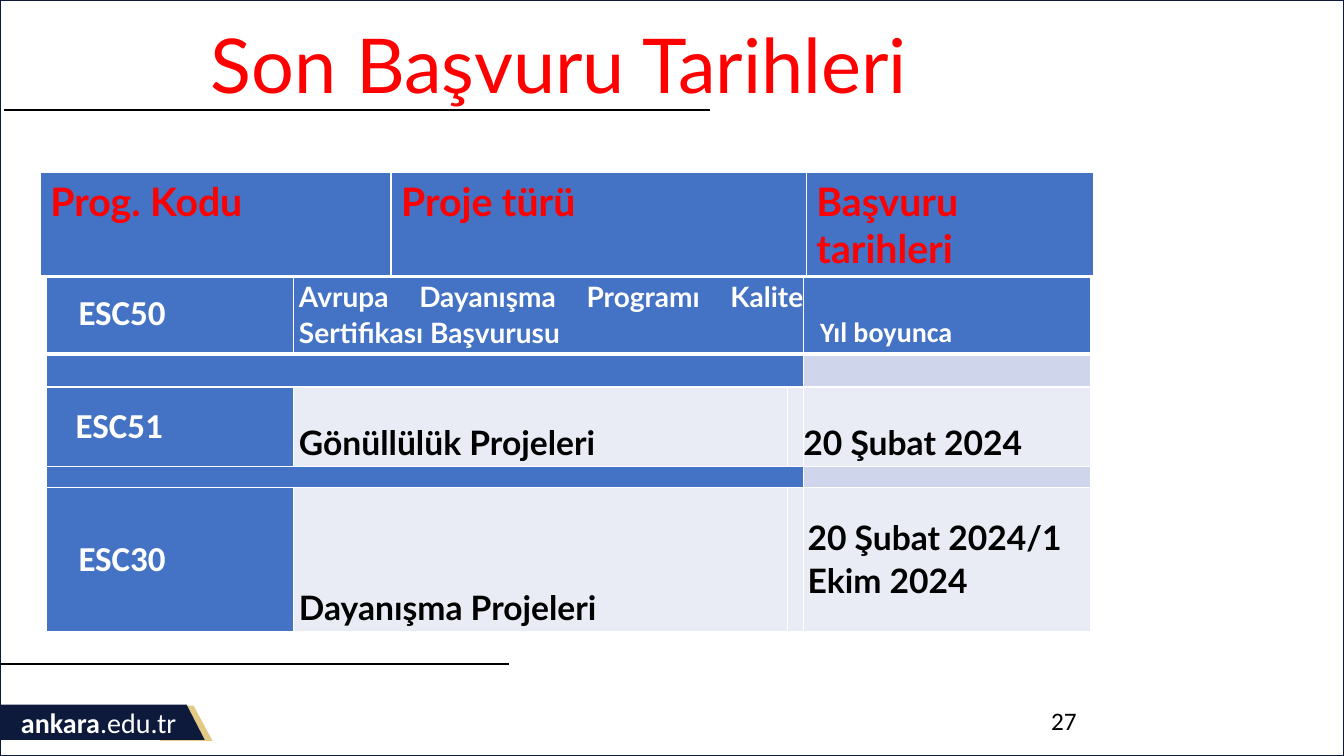
from dataclasses import dataclass

from lxml import etree
from pptx import Presentation
from pptx import util as u
from pptx.dml.color import RGBColor
from pptx.enum import shapes, text
from pptx.oxml import ns

SLIDE_WIDTH, SLIDE_HEIGHT = u.Inches(13.33), u.Inches(7.5)
MIDDLE, BOTTOM, TOP = (text.MSO_ANCHOR.MIDDLE, text.MSO_ANCHOR.BOTTOM,
                       text.MSO_ANCHOR.TOP)


@dataclass(frozen=True)
class Theme:
    navy: str = "0D1A3C"
    gold: str = "E3CA84"
    blue: str = "4472C4"
    band: str = "CFD5EA"
    pale: str = "E9EBF5"
    red: str = "FF0000"
    black: str = "000000"
    white: str = "FFFFFF"
    heading_font: str = "Lato"
    body_font: str = "Calibri"
    title_size: float = 54
    header_size: float = 28
    code_size: float = 25
    project_size: float = 24
    small_size: float = 20
    number_size: float = 18
    spacer_size: float = 8
    frame_line: float = 1.5
    rule_line: float = 1.31
    thin_border: float = 1
    thick_border: float = 3


THEME = Theme()


@dataclass(frozen=True)
class Style:
    size: float
    font: str
    color: str
    bold: bool = False


@dataclass(frozen=True)
class Box:
    """Left, top, width and height in percent of the slide."""
    left: float
    top: float
    width: float
    height: float

    def lengths(self) -> tuple:
        return (across(self.left), down(self.top),
                across(self.width), down(self.height))


@dataclass(frozen=True)
class Entry:
    """A table cell; its indent and space after are in points."""
    fill: str
    words: str = ""
    style: Style | None = None
    anchor: text.MSO_ANCHOR = BOTTOM
    indent: float = 0
    after: float = 8
    justified: bool = False
    columns: int = 1


@dataclass(frozen=True)
class Rule:
    start: float
    end: float
    height: float


CODE = Style(THEME.code_size, THEME.body_font, THEME.white, True)
PROJECT = Style(THEME.project_size, THEME.heading_font, THEME.black, True)
HEADER = Style(THEME.header_size, THEME.heading_font, THEME.red, True)
QUALITY = Style(THEME.small_size, THEME.heading_font, THEME.white, True)
ALL_YEAR = Style(THEME.small_size, THEME.body_font, THEME.white, True)
TITLE = Style(THEME.title_size, THEME.heading_font, THEME.red)
NUMBER = Style(THEME.number_size, THEME.body_font, THEME.black)
SITE_NAME = Style(THEME.small_size, THEME.body_font, THEME.white, True)
SITE_ENDING = Style(THEME.small_size, THEME.body_font, THEME.white)

RULES = [Rule(0.3, 52.8, 14.53), Rule(0.08, 37.88, 87.87)]
BADGE = [(0, 93.2), (13.88, 93.2), (15.23, 97.87), (0, 97.87)]

HEADER_ROWS = [[Entry(THEME.blue, words, HEADER, TOP)
                for words in ("Prog. Kodu", "Proje türü", "Başvuru tarihleri")]]
SPACER = [Entry(THEME.blue, columns=3), Entry(THEME.band)]
DATE_ROWS = [
    [Entry(THEME.blue, "ESC50", CODE, MIDDLE, 23),
     Entry(THEME.blue, "Avrupa Dayanışma Programı Kalite Sertifikası Başvurusu",
           QUALITY, indent=4, justified=True, columns=2),
     Entry(THEME.blue, "Yıl boyunca", ALL_YEAR, indent=12)],
    SPACER,
    [Entry(THEME.blue, "ESC51", CODE, MIDDLE, 21),
     Entry(THEME.pale, "Gönüllülük Projeleri", PROJECT, indent=4),
     Entry(THEME.pale),
     Entry(THEME.pale, "20 Şubat 2024", PROJECT)],
    SPACER,
    [Entry(THEME.blue, "ESC30", CODE, MIDDLE, 23),
     Entry(THEME.pale, "Dayanışma Projeleri", PROJECT, indent=4),
     Entry(THEME.pale),
     Entry(THEME.pale, "20 Şubat 2024/1 Ekim 2024", PROJECT, MIDDLE, 3, 4.3)],
]


def across(percent: float) -> int:
    return round(SLIDE_WIDTH * percent / 100)


def down(percent: float) -> int:
    return round(SLIDE_HEIGHT * percent / 100)


def style_run(run, style: Style) -> None:
    run.font.size = u.Pt(style.size)
    run.font.name = style.font
    run.font.bold = style.bold
    run.font.color.rgb = RGBColor.from_string(style.color)


def paint(shape, color: str) -> None:
    shape.shadow.inherit = False
    shape.fill.solid()
    shape.fill.fore_color.rgb = RGBColor.from_string(color)
    shape.line.fill.background()


def add_frame(slide) -> None:
    frame = slide.shapes.add_shape(shapes.MSO_SHAPE.RECTANGLE,
                                   *Box(0, 0, 100, 100).lengths())
    frame.shadow.inherit = False
    frame.fill.background()
    frame.line.color.rgb = RGBColor.from_string(THEME.navy)
    frame.line.width = u.Pt(THEME.frame_line)


def add_badge(slide) -> None:
    edge = slide.shapes.add_shape(shapes.MSO_SHAPE.TRAPEZOID,
                                  *Box(11.92, 93.33, 3.9, 4.67).lengths())
    edge.adjustments[0] = 0.54
    paint(edge, THEME.gold)
    start, *corners = [(across(x), down(y)) for x, y in BADGE]
    builder = slide.shapes.build_freeform(*start)
    builder.add_line_segments(corners)
    paint(builder.convert_to_shape(), THEME.navy)


def add_text(slide, box: Box, pieces: list[tuple[str, Style]]):
    frame = slide.shapes.add_textbox(*box.lengths()).text_frame
    frame.word_wrap = True
    for words, style in pieces:
        run = frame.paragraphs[0].add_run()
        run.text = words
        style_run(run, style)
    return frame


def add_rule(slide, rule: Rule) -> None:
    line = slide.shapes.add_connector(
        shapes.MSO_CONNECTOR.STRAIGHT, across(rule.start), down(rule.height),
        across(rule.end), down(rule.height))
    line.line.color.rgb = RGBColor.from_string(THEME.black)
    line.line.width = u.Pt(THEME.rule_line)
    etree.SubElement(line._element.spPr, ns.qn("a:effectLst"))


def add_borders(cell, bottom: float) -> None:
    properties = cell._tc.get_or_add_tcPr()
    for side in "LRTB":
        width = bottom if side == "B" else THEME.thin_border
        border = etree.SubElement(properties, ns.qn(f"a:ln{side}"),
                                  w=str(u.Pt(width)))
        fill = etree.SubElement(border, ns.qn("a:solidFill"))
        etree.SubElement(fill, ns.qn("a:srgbClr"), val=THEME.white)


def write_entry(cell, entry: Entry) -> None:
    paragraph = cell.text_frame.paragraphs[0]
    if entry.style is None:
        ending = paragraph._p.get_or_add_endParaRPr()
        ending.set("sz", str(THEME.spacer_size * 100))
    else:
        paragraph.text = entry.words
        style_run(paragraph.runs[0], entry.style)
    cell.vertical_anchor = entry.anchor
    if entry.anchor == TOP:
        return
    cell.margin_left = u.Pt(entry.indent)
    cell.margin_top = cell.margin_right = 0
    cell.margin_bottom = u.Inches(0.04)
    if entry.style:
        paragraph.line_spacing = 1.07
        paragraph.space_after = u.Pt(entry.after)
    if entry.justified:
        paragraph.alignment = text.PP_ALIGN.JUSTIFY


def add_grid(slide, left: float, top: float, widths: list[float],
             heights: list[float], rows: list[list[Entry]]) -> None:
    """Draw a table whose first row has a thick lower border."""
    box = Box(left, top, sum(widths), sum(heights))
    table = slide.shapes.add_table(len(heights), len(widths), *box.lengths()).table
    table.first_row = table.horz_banding = False
    for column, width in zip(table.columns, widths):
        column.width = across(width)
    for index, (row, height) in enumerate(zip(rows, heights)):
        table.rows[index].height = down(height)
        bottom = THEME.thin_border if index else THEME.thick_border
        position = 0
        for entry in row:
            last = position + entry.columns - 1
            for place in range(position, last + 1):
                cell = table.cell(index, place)
                add_borders(cell, bottom)
                cell.fill.solid()
                cell.fill.fore_color.rgb = RGBColor.from_string(entry.fill)
            first = table.cell(index, position)
            if entry.columns > 1:
                first.merge(table.cell(index, last))
            write_entry(first, entry)
            position = last + 1


def main() -> None:
    presentation = Presentation()
    presentation.slide_width, presentation.slide_height = SLIDE_WIDTH, SLIDE_HEIGHT
    slide = presentation.slides.add_slide(presentation.slide_layouts[6])
    add_frame(slide)
    add_badge(slide)
    add_text(slide, Box(0.82, 92.67, 15.98, 5.87),
             [("ankara", SITE_NAME), (".edu.tr", SITE_ENDING)])
    add_text(slide, Box(77.48, 92.67, 22.5, 5.33), [("27", NUMBER)])
    for rule in RULES:
        add_rule(slide, rule)
    title = add_text(slide, Box(0, -5.33, 68.55, 24),
                     [("Son Başvuru Tarihleri", TITLE)])
    title.vertical_anchor = MIDDLE
    title.margin_left, title.margin_right = across(15.7), 0
    title.margin_top = down(4.13)
    add_grid(slide, 3.45, 36.27, [18.38, 36.75, 1.2, 21.38],
             [10.53, 4.4, 10.53, 2.8, 19.07], DATE_ROWS)
    add_grid(slide, 3, 22.8, [26.1, 30.9, 21.38], [13.7], HEADER_ROWS)
    presentation.save("out.pptx")


if __name__ == "__main__":
    main()
